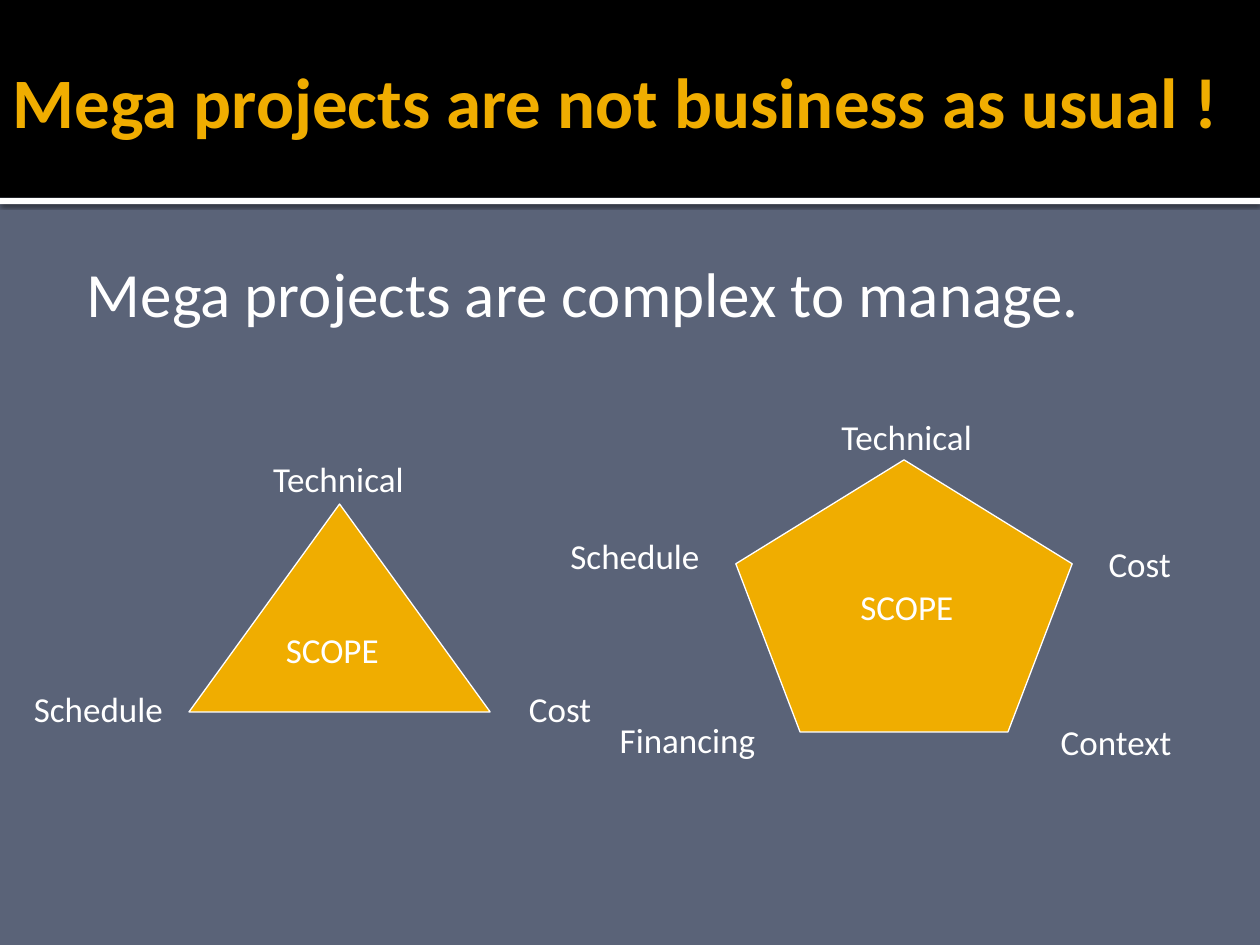
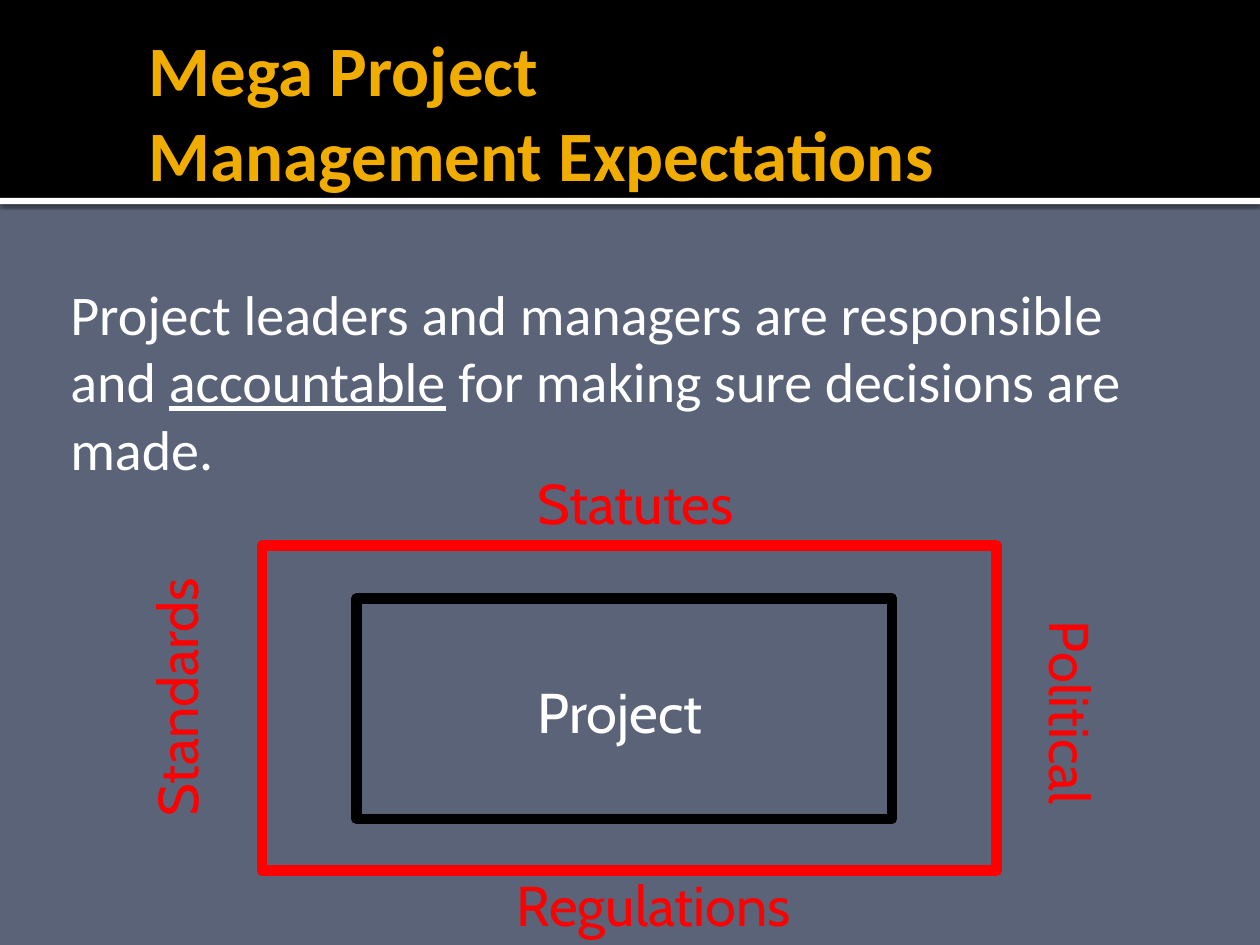
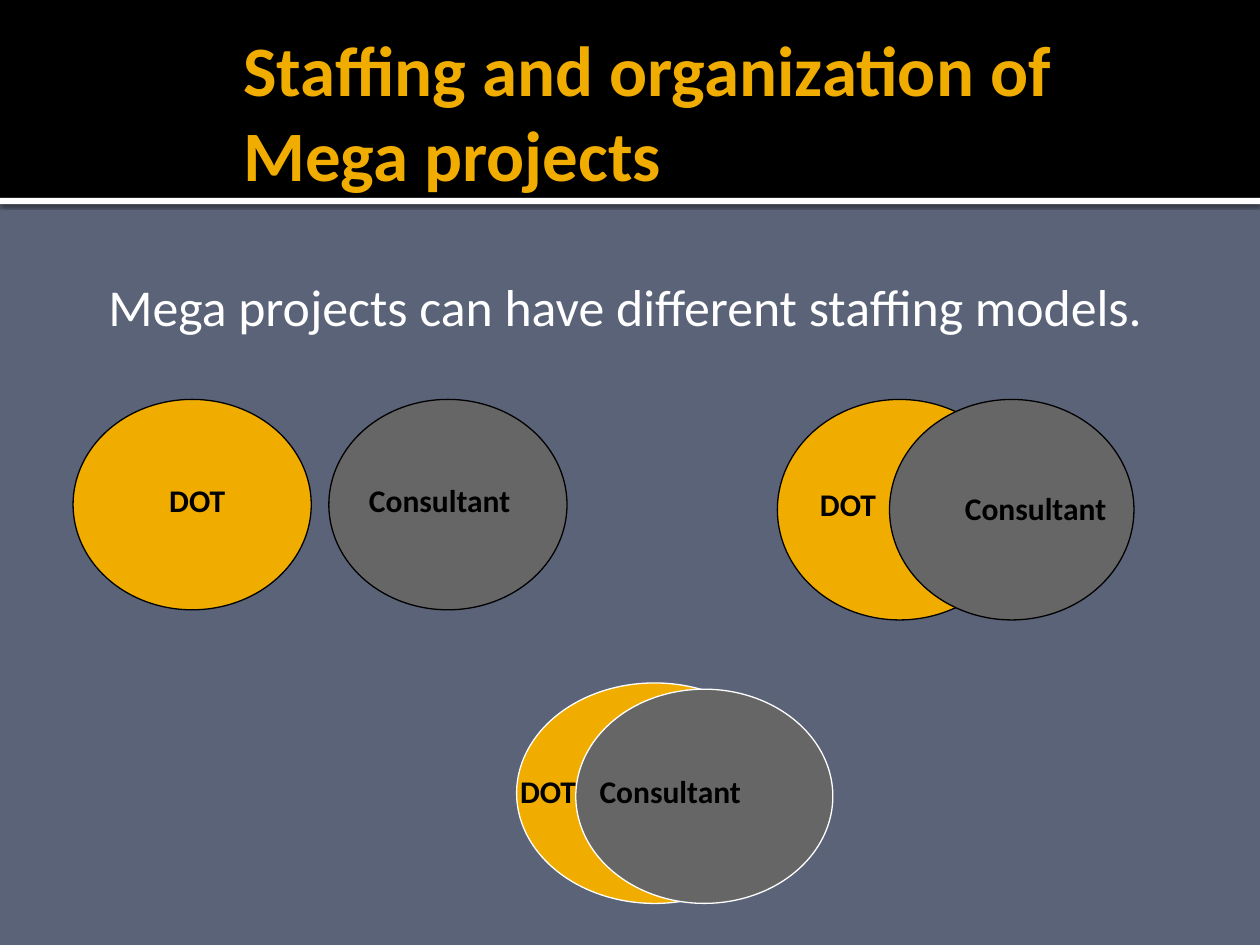
import pptx
import pptx.util
import pptx.dml.color
import pptx.enum.shapes
import pptx.enum.text
import pptx.oxml
import pptx.oxml.ns

Inches, Pt = pptx.util.Inches, pptx.util.Pt
Kind = pptx.enum.shapes.MSO_SHAPE
Align = pptx.enum.text.PP_ALIGN
Anchor = pptx.enum.text.MSO_ANCHOR
Fit = pptx.enum.text.MSO_AUTO_SIZE


# Theme
class Theme:
    slate, gold, gray = "5A6378", "F0AD00", "666666"
    white, black, red = "FFFFFF", "000000", "FF0000"
    head = dict(size=Pt(40.5), name="Calibri", bold=True, color=gold)
    label = dict(size=Pt(20), name="Calibri", color=white)
    sign = dict(size=Pt(32), name="Cabin", color=red)
    core = dict(sign, color=white)
    tag = dict(size=Pt(18), name="Calibri", bold=True, color=black)
    body = dict(name="Calibri", color=white)
    thin, thick = 0.75, 6


# Content: titles with box, body paragraphs as runs (text, underlined)
TITLES = [
    ("Mega projects are not business as usual !", (0, 0.17, 10, 1.25)),
    ("Mega Project\vManagement Expectations", (1.08, 0.25, 8.5, 1.25)),
    ("Staffing and organization of\vMega projects", (1.83, 0.25, 8.17, 1.25)),
]
BODIES = [
    dict(box=(0.5, 1.92, 8.42, 0.75), pad=(0.06, 0.1), size=36,
         lines=[[("Mega projects are complex to manage.", None)]]),
    dict(box=(0.33, 2.17, 9.33, 1.72), pad=(0.1, 0.05), size=32,
         lines=[[("Project leaders and managers are responsible", None)],
                [("and ", None), ("accountable", True),
                 (" for making sure decisions are", None)],
                [("made.", None)]]),
    dict(box=(0.67, 2.08, 9.17, 1.17), pad=(0.06, 0.1), size=29.6,
         lines=[[("Mega projects can have different staffing models.", None)]]),
]

# Scope figures: shape, box, labels (text, left, top, width, alignment)
SCOPES = [
    (Kind.ISOSCELES_TRIANGLE, (1.5, 4, 2.39, 1.65), [
        ("Technical", 2.07, 3.58, 1.32, Align.LEFT),
        ("Schedule", 0.17, 5.41, 1.36, Align.LEFT),
        ("Cost", 4.1, 5.41, 0.77, Align.LEFT),
        ("SCOPE", 2.17, 4.94, 1, Align.LEFT)]),
    (Kind.REGULAR_PENTAGON, (5.84, 3.65, 2.67, 2.16), [
        ("Technical", 6.58, 3.25, 1.27, Align.LEFT),
        ("Cost", 8.7, 4.26, 0.8, Align.LEFT),
        ("Schedule", 4.4, 4.19, 1.25, Align.RIGHT),
        ("Context", 8.32, 5.67, 1.18, Align.LEFT),
        ("Financing", 4.82, 5.65, 1.43, Align.LEFT),
        ("SCOPE", 6.73, 4.6, 1.02, Align.LEFT)]),
]

# Frames around the project, and the words on each side
FRAMES = [
    ((2.83, 4.75, 4.25, 1.75), Theme.black),
    ((2.08, 4.33, 5.83, 2.58), Theme.red),
]
SIGNS = [
    ("Project", (4.17, 5.33, 1.58, 0.64), Theme.core, "horz"),
    ("Statutes", (4.17, 3.67, 2, 0.64), Theme.sign, "horz"),
    ("Standards", (1.08, 4.33, 0.74, 2.25), Theme.sign, "vert270"),
    ("Regulations", (4, 6.86, 3, 0.64), Theme.sign, "horz"),
    ("Political", (8.08, 4.83, 0.74, 1.75), Theme.sign, "vert"),
]

# Staffing models: line colour, then oval and tag boxes for each party
MODELS = [
    (Theme.black, (0.58, 3.17, 1.89, 1.67), (1.07, 3.77, 0.99),
     (2.61, 3.17, 1.89, 1.67), (2.83, 3.77, 1.4)),
    (Theme.black, (6.17, 3.17, 1.94, 1.75), (6.32, 3.8, 0.82),
     (7.06, 3.17, 1.94, 1.75), (7.56, 3.83, 1.44)),
    (Theme.white, (4.1, 5.42, 2.19, 1.75), (3.92, 6.08, 0.86),
     (4.57, 5.47, 2.04, 1.7), (4.66, 6.08, 1.62)),
]
PARTIES = [("DOT", Theme.gold, Align.CENTER),
           ("Consultant", Theme.gray, Align.LEFT)]


# Helpers
def put(item, vals):
    for key, val in vals.items():
        setattr(item, key, val)


def rgb(code):
    return pptx.dml.color.RGBColor.from_string(code)


def style(font, look):
    put(font, {key: val for key, val in look.items() if key != "color"})
    font.color.rgb = rgb(look["color"])


def draw(slide, kind, box, fill=None, line=None, width=Theme.thin):
    shape = slide.shapes.add_shape(kind, *map(Inches, box))
    shape.shadow.inherit = False
    if fill:
        shape.fill.solid()
        shape.fill.fore_color.rgb = rgb(fill)
    else:
        shape.fill.background()
    if line:
        shape.line.color.rgb = rgb(line)
        shape.line.width = Pt(width)
    else:
        shape.line.fill.background()
    return shape


def write(slide, text, box, look, align=Align.LEFT, turn="horz"):
    frame = slide.shapes.add_textbox(*map(Inches, box)).text_frame
    put(frame, dict(text=text, word_wrap=True, auto_size=Fit.SHAPE_TO_FIT_TEXT))
    frame.paragraphs[0].alignment = align
    style(frame.paragraphs[0].runs[0].font, look)
    if turn != "horz":
        body = frame._txBody.find(pptx.oxml.ns.qn("a:bodyPr"))
        body.set("vert", turn)


def add_title(slide, text, box):
    title = slide.shapes.title
    put(title, dict(zip(("left", "top", "width", "height"), map(Inches, box))))
    frame = title.text_frame
    put(frame, dict(text=text, word_wrap=True, auto_size=Fit.NONE,
                    vertical_anchor=Anchor.MIDDLE,
                    margin_left=Inches(0.1), margin_right=Inches(0.05),
                    margin_top=Inches(0.05), margin_bottom=Inches(0.05)))
    para = frame.paragraphs[0]
    para.alignment = Align.LEFT
    for run in para.runs:
        style(run.font, Theme.head)


def add_body(slide, box, pad, size, lines):
    frame = slide.shapes.add_textbox(*map(Inches, box)).text_frame
    put(frame, dict(word_wrap=True, margin_left=Inches(pad[0]),
                    margin_top=Inches(pad[1])))
    for num, line in enumerate(lines):
        para = frame.add_paragraph() if num else frame.paragraphs[0]
        props = para._p.get_or_add_pPr()
        props.set("marL", str(Inches(0.48)))
        props.set("indent", str(Inches(-0.35)))
        for text, under in line:
            run = para.add_run()
            run.text = text
            style(run.font, dict(Theme.body, size=Pt(size), underline=under))


# Shared background and bands, moved from a slide to its layout
def add_bands(deck, slide):
    back = deck.slide_master.background.fill
    back.solid()
    back.fore_color.rgb = rgb(Theme.slate)
    rule = draw(slide, Kind.RECTANGLE, (0, 1.57, 10, 0.05), Theme.white)
    band = draw(slide, Kind.RECTANGLE, (0, 0, 10, 1.57), Theme.black)
    glow = rule._element.spPr.find(pptx.oxml.ns.qn("a:effectLst"))
    glow.append(pptx.oxml.parse_xml(
        f'<a:outerShdw {pptx.oxml.ns.nsdecls("a")} blurRad="{Pt(2.5)}" '
        f'dist="{Pt(0.8)}" dir="5400000" algn="tl" rotWithShape="0">'
        f'<a:srgbClr val="{Theme.black}"><a:alpha val="60000"/></a:srgbClr>'
        '</a:outerShdw>'))
    tree = slide.slide_layout.shapes._spTree
    for spot, shape in enumerate((rule, band), 2):
        tree.insert(spot, shape._element)


# Figures of each slide
def add_scopes(slide):
    for kind, box, labels in SCOPES:
        draw(slide, kind, box, Theme.gold, Theme.white)
        for text, left, top, width, align in labels:
            write(slide, text, (left, top, width, 0.44), Theme.label, align)


def add_frames(slide):
    for box, line in FRAMES:
        draw(slide, Kind.RECTANGLE, box, None, line, Theme.thick)
    for text, box, look, turn in SIGNS:
        write(slide, text, box, look, turn=turn)


def add_models(slide):
    for line, *boxes in MODELS:
        pairs = zip(boxes[::2], boxes[1::2])
        for (text, fill, align), (oval, tag) in zip(PARTIES, pairs):
            draw(slide, Kind.OVAL, oval, fill, line)
            write(slide, text, (*tag, 0.4), Theme.tag, align)


def main():
    deck = pptx.Presentation()
    put(deck, dict(slide_width=Inches(10), slide_height=Inches(7.5)))
    layout = deck.slide_layouts.get_by_name("Title Only")
    figures = (add_scopes, add_frames, add_models)
    for num, (title, body, figure) in enumerate(zip(TITLES, BODIES, figures)):
        slide = deck.slides.add_slide(layout)
        if num == 0:
            add_bands(deck, slide)
        add_title(slide, *title)
        add_body(slide, **body)
        figure(slide)
    deck.save("out.pptx")


if __name__ == "__main__":
    main()
